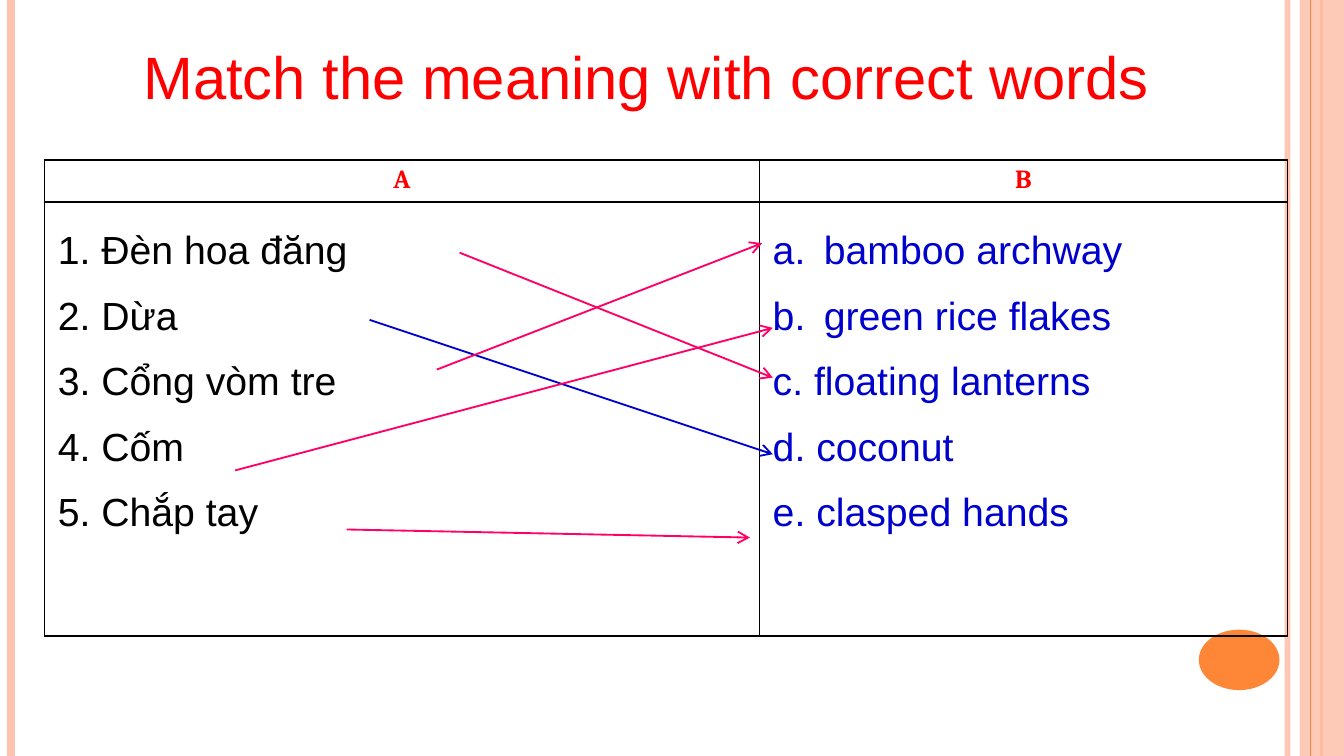
from dataclasses import dataclass

import pptx
import pptx.util
from lxml import etree
from pptx.dml.color import RGBColor
from pptx.enum.shapes import MSO_CONNECTOR, MSO_SHAPE
from pptx.enum.text import PP_ALIGN
from pptx.oxml.ns import qn
from pptx.util import Inches, Pt


@dataclass(frozen=True)
class Theme:
    peach: str = "FEC3AE"
    orange: str = "FE8637"
    red: str = "FF0000"
    black: str = "000000"
    blue: str = "0000CC"
    pink: str = "FF0066"
    body_font: str = "Arial"
    header_font: str = "Cambria"
    title_size: int = 32
    header_size: int = 14
    body_size: float = 21


THEME = Theme()
PAGE_WIDTH = 10
PAGE_HEIGHT = PAGE_WIDTH * 9 / 16
WORDS = ["1. Đèn hoa đăng", "2. Dừa", "3. Cổng vòm tre", "4. Cốm", "5. Chắp tay"]
MEANINGS = ["bamboo archway", "green rice flakes", "c. floating lanterns",
            "d. coconut", "e. clasped hands"]
NUMBERED_MEANINGS = 2
# Start and end of each arrow, relative to the table's corner.
MATCHES = [
    (3.09, 0.69, 5.42, 1.62, THEME.pink),
    (2.42, 1.19, 5.42, 2.19, THEME.blue),
    (2.25, 2.75, 5.25, 2.81, THEME.pink),
    (1.42, 2.31, 5.42, 1.25, THEME.pink),
    (2.92, 1.56, 5.34, 0.62, THEME.pink),
]


def set_alpha(fill_parent, percent):
    color = fill_parent.find(".//" + qn("a:srgbClr"))
    etree.SubElement(color, qn("a:alpha"), val=str(percent * 1000))


def add_line(page, x1, y1, x2, y2, color, width):
    line = page.shapes.add_connector(
        MSO_CONNECTOR.STRAIGHT, Inches(x1), Inches(y1), Inches(x2), Inches(y2))
    line.line.color.rgb = RGBColor.from_string(color)
    line.line.width = Pt(width)
    etree.SubElement(line._element.spPr, qn("a:effectLst"))
    return line


def add_solid(page, preset, left, top, width, height, color):
    shape = page.shapes.add_shape(
        preset, Inches(left), Inches(top), Inches(width), Inches(height))
    shape.shadow.inherit = False
    shape.fill.solid()
    shape.fill.fore_color.rgb = RGBColor.from_string(color)
    shape.line.fill.background()
    return shape


def add_frame(page, left, top, width, height):
    """Draw the side stripes, the right-hand band and the corner disc."""
    right, bottom = left + width, top + height

    def stripe(x, color, weight):
        return add_line(page, x, top, x, bottom, color, weight)

    inner = stripe(right - 0.42, THEME.peach, 3)
    set_alpha(inner.line._ln, 93)
    stripe(left + 0.08, THEME.peach, 4.5)
    stripe(right - 0.17, THEME.orange, 1.5)
    band = add_solid(page, MSO_SHAPE.RECTANGLE, right - 0.33, top, 0.33, height, THEME.peach)
    set_alpha(band._element.spPr, 87)
    stripe(right - 0.25, THEME.orange, 0.75)
    add_solid(page, MSO_SHAPE.OVAL, right - 1.08, bottom - 0.94, 0.6, 0.45, THEME.orange)


def style_paragraph(para, font, size, color, bold=False):
    para.font.name = font
    para.font.size = Pt(size)
    para.font.bold = bold
    para.font.color.rgb = RGBColor.from_string(color)


def add_title(page, left, top, width, height):
    box = page.shapes.add_textbox(Inches(left), Inches(top), Inches(width), Inches(height))
    box.text_frame.word_wrap = True
    para = box.text_frame.paragraphs[0]
    para.text = "Match the meaning with correct words "
    para.alignment = PP_ALIGN.CENTER
    style_paragraph(para, THEME.body_font, THEME.title_size, THEME.red)


def prepare_cell(cell):
    """Clear the fill, set the margins and rule all four sides."""
    cell.fill.background()
    cell.margin_left = cell.margin_right = Inches(0.1)
    cell.margin_top = cell.margin_bottom = Inches(0.04)
    properties = cell._tc.get_or_add_tcPr()
    for index, side in enumerate(("lnL", "lnR", "lnT", "lnB")):
        border = etree.Element(qn("a:" + side), w=str(Pt(1)))
        fill = etree.SubElement(border, qn("a:solidFill"))
        etree.SubElement(fill, qn("a:srgbClr"), val=THEME.black)
        properties.insert(index, border)


def fill_list(cell, items, color):
    cell.text = "\n".join(items)
    for para in cell.text_frame.paragraphs:
        para.line_spacing = 1.5
        style_paragraph(para, THEME.body_font, THEME.body_size, color)


def hang_meanings(cell):
    """Hang every line and letter the first ones automatically."""
    for index, para in enumerate(cell.text_frame.paragraphs):
        properties = para._p.get_or_add_pPr()
        properties.set("marL", str(Inches(0.38)))
        properties.set("indent", str(Inches(-0.38)))
        if index < NUMBERED_MEANINGS:
            bullet = etree.Element(qn("a:buAutoNum"), type="alphaLcPeriod")
            properties.find(qn("a:defRPr")).addprevious(bullet)


def add_match_table(page, left, top, width, height):
    header_height, words_width = 0.3, 5.32
    table = page.shapes.add_table(
        2, 2, Inches(left), Inches(top), Inches(width), Inches(height)).table
    table.columns[0].width = Inches(words_width)
    table.columns[1].width = Inches(width - words_width)
    table.rows[0].height = Inches(header_height)
    table.rows[1].height = Inches(height - header_height)
    for cell in table.iter_cells():
        prepare_cell(cell)
    for column, heading in enumerate("AB"):
        cell = table.cell(0, column)
        cell.text = heading
        para = cell.text_frame.paragraphs[0]
        para.alignment = PP_ALIGN.CENTER
        style_paragraph(para, THEME.header_font, THEME.header_size, THEME.red, bold=True)
    fill_list(table.cell(1, 0), WORDS, THEME.black)
    fill_list(table.cell(1, 1), MEANINGS, THEME.blue)
    hang_meanings(table.cell(1, 1))


def add_match_arrows(page, left, top):
    for x1, y1, x2, y2, color in MATCHES:
        arrow = add_line(page, left + x1, top + y1, left + x2, top + y2, color, 1)
        etree.SubElement(arrow.line._ln, qn("a:tailEnd"), type="arrow")


def main():
    deck = pptx.Presentation()
    deck.slide_width, deck.slide_height = Inches(PAGE_WIDTH), Inches(PAGE_HEIGHT)
    page = deck.slides.add_slide(deck.slide_layouts[6])
    add_frame(page, 0, 0, PAGE_WIDTH, PAGE_HEIGHT)
    add_title(page, 0.25, 0.25, 9.25, 0.64)
    add_match_table(page, 0.33, 1.19, 9.25, 3.53)
    add_match_arrows(page, 0.33, 1.19)
    deck.save("out.pptx")


if __name__ == "__main__":
    main()
